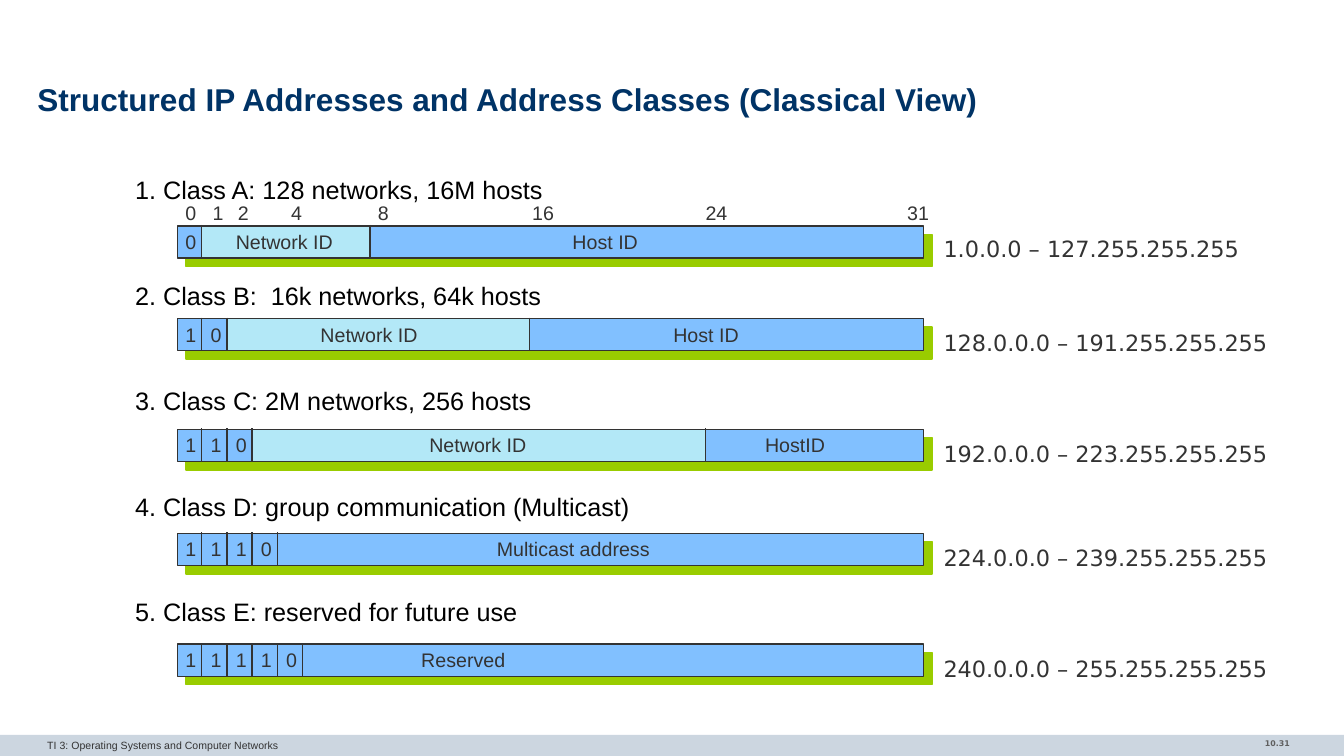
from collections import namedtuple

from lxml import etree
from pptx import Presentation
from pptx import util as u
from pptx.dml.color import RGBColor
from pptx.enum import shapes, text
from pptx.oxml import ns

COLORS = {
    "band": "CCD6E0", "title": "003366", "heading": "000000", "ink": "333333",
    "page": "5F5F5F", "bar": "81C0FF", "network": "B3E8F7", "shadow": "99CC00",
}
BAR_LEFT, BAR_RIGHT, BAR_HEIGHT, BIT_WIDTH = 1.76, 9.16, 0.32, 0.25

AddressClass = namedtuple(
    "AddressClass", "heading top bits network_end labels addresses addresses_top")
CLASSES = [
    AddressClass("1. Class A: 128 networks, 16M hosts", 2.24, "0", 3.67,
                 [("Network ID", 2.24, 1.17), ("Host ID", 5.58, 0.86)],
                 "1.0.0.0 – 127.255.255.255", 2.28),
    AddressClass("2. Class B:  16k networks, 64k hosts", 3.16, "10", 5.25,
                 [("Network ID", 3.08, 1.17), ("Host ID", 6.58, 0.86)],
                 "128.0.0.0 – 191.255.255.255", 3.22),
    AddressClass("3. Class C: 2M networks, 256 hosts", 4.26, "110", 7.0,
                 [("Network ID", 4.16, 1.17), ("HostID", 7.49, 0.8)],
                 "192.0.0.0 – 223.255.255.255", 4.32),
    AddressClass("4. Class D: group communication (Multicast)", 5.29, "1110", None,
                 [("Multicast address", 4.83, 1.73)],
                 "224.0.0.0 – 239.255.255.255", 5.35),
    AddressClass("5. Class E: reserved for future use", 6.39, "11110", None,
                 [("Reserved", 4.08, 1.04)],
                 "240.0.0.0 – 255.255.255.255", 6.45),
]
BIT_POSITIONS = ["0", "1", "2", "4", "8", "16", "24", "31"]
BIT_TABS = [0.27, 0.52, 1.05, 1.91, 3.44, 5.16, 7.16]


class SlideBuilder:
    """Draws styled elements on the current slide."""

    def __init__(self, slide):
        self.slide = slide

    def color(self, name):
        return RGBColor.from_string(COLORS[name])

    def style(self, paragraph, size, color, font="Arial", bold=False):
        for run in paragraph.runs:
            run.font.size = u.Pt(size)
            run.font.name = font
            run.font.bold = bold
            run.font.color.rgb = self.color(color)

    def title(self, words, left, top, width, height):
        heading = self.slide.shapes.title
        heading.left, heading.top = u.Inches(left), u.Inches(top)
        heading.width, heading.height = u.Inches(width), u.Inches(height)
        frame = heading.text_frame
        frame.text = words
        frame.margin_left = frame.margin_right = 0
        frame.margin_top = frame.margin_bottom = 0
        frame.vertical_anchor = text.MSO_ANCHOR.MIDDLE
        paragraph = frame.paragraphs[0]
        paragraph.alignment = text.PP_ALIGN.LEFT
        paragraph.line_spacing = 0.85
        self.style(paragraph, 22.5, "title", bold=True)

    def label(self, words, left, top, width, height=0.34, size=14, color="ink",
              font="Arial", bold=False, align=text.PP_ALIGN.LEFT, wrap=False):
        box = self.slide.shapes.add_textbox(
            u.Inches(left), u.Inches(top), u.Inches(width), u.Inches(height))
        frame = box.text_frame
        frame.word_wrap = wrap
        frame.text = words
        for paragraph in frame.paragraphs:
            paragraph.alignment = align
            self.style(paragraph, size, color, font, bold)
        return frame

    def headings(self, lines, left, top, width, height, gap):
        frame = self.label("\n".join(lines), left, top, width, height,
                           size=18, color="heading", wrap=True)
        frame.margin_left = frame.margin_top = 0
        for paragraph in frame.paragraphs[1:]:
            paragraph.space_before = u.Pt(gap)

    def ruler(self, positions, tabs, left, top, width):
        frame = self.label("\t".join(positions), left, top, width, wrap=True)
        properties = frame.paragraphs[0]._p.get_or_add_pPr()
        stops = etree.SubElement(properties, ns.qn("a:tabLst"))
        for tab in tabs:
            etree.SubElement(stops, ns.qn("a:tab"),
                             pos=str(int(u.Inches(tab))), algn="l")

    def bar(self, fill, left, top, width, height, outlined=True, shadowed=False):
        shape = self.slide.shapes.add_shape(
            shapes.MSO_SHAPE.RECTANGLE, u.Inches(left), u.Inches(top),
            u.Inches(width), u.Inches(height))
        shape.fill.solid()
        shape.fill.fore_color.rgb = self.color(fill)
        if outlined:
            shape.line.color.rgb = self.color("ink")
            shape.line.width = u.Pt(1)
        else:
            shape.line.fill.background()
        shape.shadow.inherit = False
        if shadowed:
            effects = shape._element.spPr.find(ns.qn("a:effectLst"))
            shadow = etree.SubElement(
                effects, ns.qn("a:outerShdw"), dist=str(int(u.Pt(8.5))),
                dir="2700000", algn="ctr", rotWithShape="0")
            etree.SubElement(shadow, ns.qn("a:srgbClr"), val=COLORS["shadow"])

    def divider(self, x, top, bottom):
        line = self.slide.shapes.add_connector(
            shapes.MSO_CONNECTOR.STRAIGHT, u.Inches(x), u.Inches(top),
            u.Inches(x), u.Inches(bottom))
        line.line.color.rgb = self.color("ink")
        line.line.width = u.Pt(1)
        etree.SubElement(line._element.spPr, ns.qn("a:effectLst"))

    def address_class(self, row):
        self.bar("bar", BAR_LEFT, row.top, BAR_RIGHT - BAR_LEFT, BAR_HEIGHT,
                 shadowed=True)
        edges = [1.75 + BIT_WIDTH * (i + 1) for i in range(len(row.bits))]
        if row.network_end:
            self.bar("network", edges[-1], row.top,
                     row.network_end - edges[-1], BAR_HEIGHT)
            edges.append(row.network_end)
        for edge in edges:
            self.divider(edge, row.top - 0.01, row.top + BAR_HEIGHT)
        for i, bit in enumerate(row.bits):
            self.label(bit, 1.74 + BIT_WIDTH * i, row.top - 0.01, 0.31)
        for words, left, width in row.labels:
            self.label(words, left, row.top - 0.01, width)
        self.label(row.addresses, 9.26, row.addresses_top, 3.95, 0.37,
                   size=16, font="DejaVu Sans", wrap=True)


def main():
    deck = Presentation()
    deck.slide_width, deck.slide_height = u.Inches(13.33), u.Inches(7.5)
    builder = SlideBuilder(deck.slides.add_slide(deck.slide_layouts[5]))
    builder.bar("band", 0, 7.29, 13.33, 0.21, outlined=False)
    builder.label("10.31", 11.1, 7.28, 1.79, 0.23, size=5.6, color="page",
                  font="DejaVu Sans", bold=True, align=text.PP_ALIGN.RIGHT, wrap=True)
    builder.title("Structured IP Addresses and Address Classes (Classical View)",
                  0.37, 0.78, 12.6, 0.47)
    builder.headings([row.heading for row in CLASSES], 1.34, 1.73, 7.5, 4.5, gap=53.8)
    builder.ruler(BIT_POSITIONS, BIT_TABS, 1.74, 1.94, 7.63)
    for row in CLASSES:
        builder.address_class(row)
    builder.label("TI 3: Operating Systems and Computer Networks",
                  0.37, 7.28, 8.72, 0.22, size=7.5, wrap=True)
    deck.save("out.pptx")


if __name__ == "__main__":
    main()
